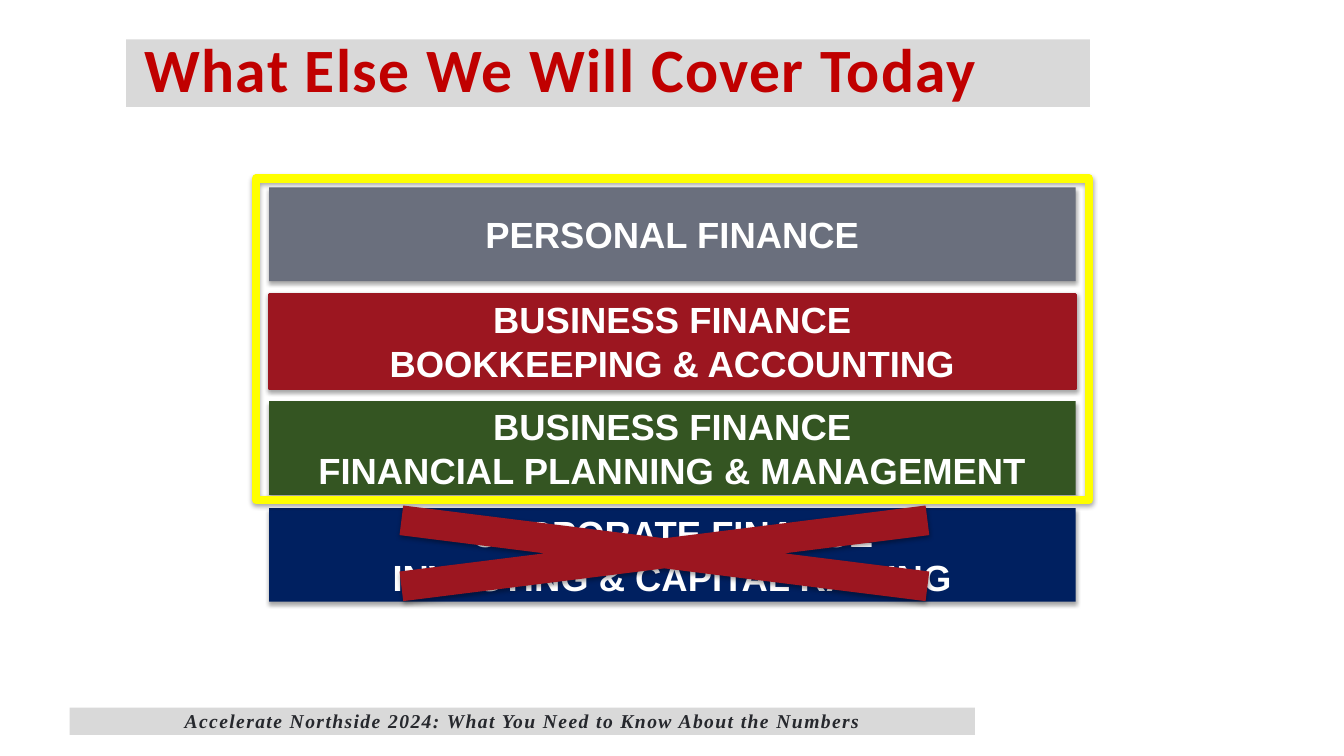
from pptx import Presentation
from pptx.dml.color import RGBColor
from pptx.enum.shapes import MSO_SHAPE as Shape
from pptx.enum.text import MSO_ANCHOR as Anchor, MSO_AUTO_SIZE as AutoSize, PP_ALIGN as Align
from pptx.oxml import parse_xml
from pptx.oxml.ns import nsdecls, qn
from pptx.util import Pt

PX = 9144  # one hundred px to the inch

RED, GREY, WHITE = "9C1620", "D9D9D9", "FFFFFF"
TOPICS = [
    ("6A6F7D", ["PERSONAL FINANCE"]),
    (RED, ["BUSINESS FINANCE", "BOOKKEEPING & ACCOUNTING"]),
    ("345522", ["BUSINESS FINANCE", "FINANCIAL PLANNING & MANAGEMENT"]),
    ("002060", ["CORPORATE FINANCE", "INVESTING & CAPITAL RAISING"]),
]
BAR_LEFT, BAR_TOP, BAR_WIDTH, BAR_HEIGHT, BAR_PITCH = 267, 186, 800, 93, 106


def color(hex_string):
    return RGBColor.from_string(hex_string)


def paint(shape, fill=None, line=None, line_width=0):
    if fill:
        shape.fill.solid()
        shape.fill.fore_color.rgb = color(fill)
    else:
        shape.fill.background()
    if line:
        shape.line.color.rgb = color(line)
        shape.line.width = Pt(line_width)
    else:
        shape.line.fill.background()


def add_soft_shadow(shape):
    effects = shape._element.spPr.find(qn("a:effectLst"))
    effects.append(parse_xml(
        f'<a:outerShdw {nsdecls("a")} blurRad="{Pt(3.1)}" dist="{Pt(1.8)}" '
        'dir="5400000" rotWithShape="0"><a:srgbClr val="000000">'
        '<a:alpha val="35000"/></a:srgbClr></a:outerShdw>'))


def add_block(page, kind, left, top, width, height, fill=None, line=None,
              line_width=0, shadow=True):
    shape = page.shapes.add_shape(
        kind, left * PX, top * PX, width * PX, height * PX)
    paint(shape, fill, line, line_width)
    shape.shadow.inherit = False
    if shadow:
        add_soft_shadow(shape)
    return shape


def add_text(para, text, font, size, text_color, italic=False, spacing=0):
    span = para.add_run()
    span.text = text
    span.font.name = font
    span.font.size = Pt(size)
    span.font.bold = True
    span.font.italic = italic
    span.font.color.rgb = color(text_color)
    if spacing:
        span.font._element.set("spc", str(spacing * 100))


def add_topic(page, row, fill, lines):
    line = RED if fill == RED else None
    bar = add_block(page, Shape.RECTANGLE, BAR_LEFT, BAR_TOP + row * BAR_PITCH,
                    BAR_WIDTH, BAR_HEIGHT, fill, line, 2.25)
    frame = bar.text_frame
    frame.word_wrap = True
    frame.vertical_anchor = Anchor.MIDDLE
    for index, text in enumerate(lines):
        para = frame.add_paragraph() if index else frame.paragraphs[0]
        para.alignment = Align.CENTER
        add_text(para, text, "Arial", 26, WHITE)


def fill_strip(shape, left_inset, top_inset, align):
    """Set up a one-line strip and return its paragraph."""
    frame = shape.text_frame
    frame.word_wrap = True
    frame.auto_size = AutoSize.NONE
    frame.vertical_anchor = Anchor.TOP
    frame.margin_left, frame.margin_top = left_inset * PX, top_inset * PX
    frame.margin_right = frame.margin_bottom = 0
    para = frame.paragraphs[0]
    para.alignment = align
    para.line_spacing = 0.8
    para.space_before = Pt(0)
    return para


def set_title(page, text):
    title = page.shapes.title
    title.left, title.top, title.width, title.height = (
        125 * PX, 39 * PX, 956 * PX, 67 * PX)
    paint(title, GREY)
    para = fill_strip(title, 18, 6, Align.LEFT)
    add_text(para, text, "Calibri", 44, "C00000", spacing=1)


def add_footer(page, text):
    strip = add_block(page, Shape.RECTANGLE, 69, 702, 898, 27, GREY, shadow=False)
    para = fill_strip(strip, 0, 6, Align.CENTER)
    add_text(para, text, "Times New Roman", 14, "26282D", italic=True, spacing=1)


def main():
    deck = Presentation()
    deck.slide_width, deck.slide_height = 1333 * PX, 750 * PX
    page = deck.slides.add_slide(deck.slide_layouts[5])
    set_title(page, "What Else We Will Cover Today")

    # Topic bars
    for row, (fill, lines) in enumerate(TOPICS):
        add_topic(page, row, fill, lines)

    # Frame around today's topics, cross over the one left out
    add_block(page, Shape.RECTANGLE, 254, 177, 826, 319, line="FFFF00", line_width=6)
    add_block(page, Shape.MATH_MULTIPLY, 157, 486, 1004, 126, RED)

    add_footer(page, "Accelerate Northside 2024: What You Need to Know About the Numbers")
    deck.save("out.pptx")


if __name__ == "__main__":
    main()
